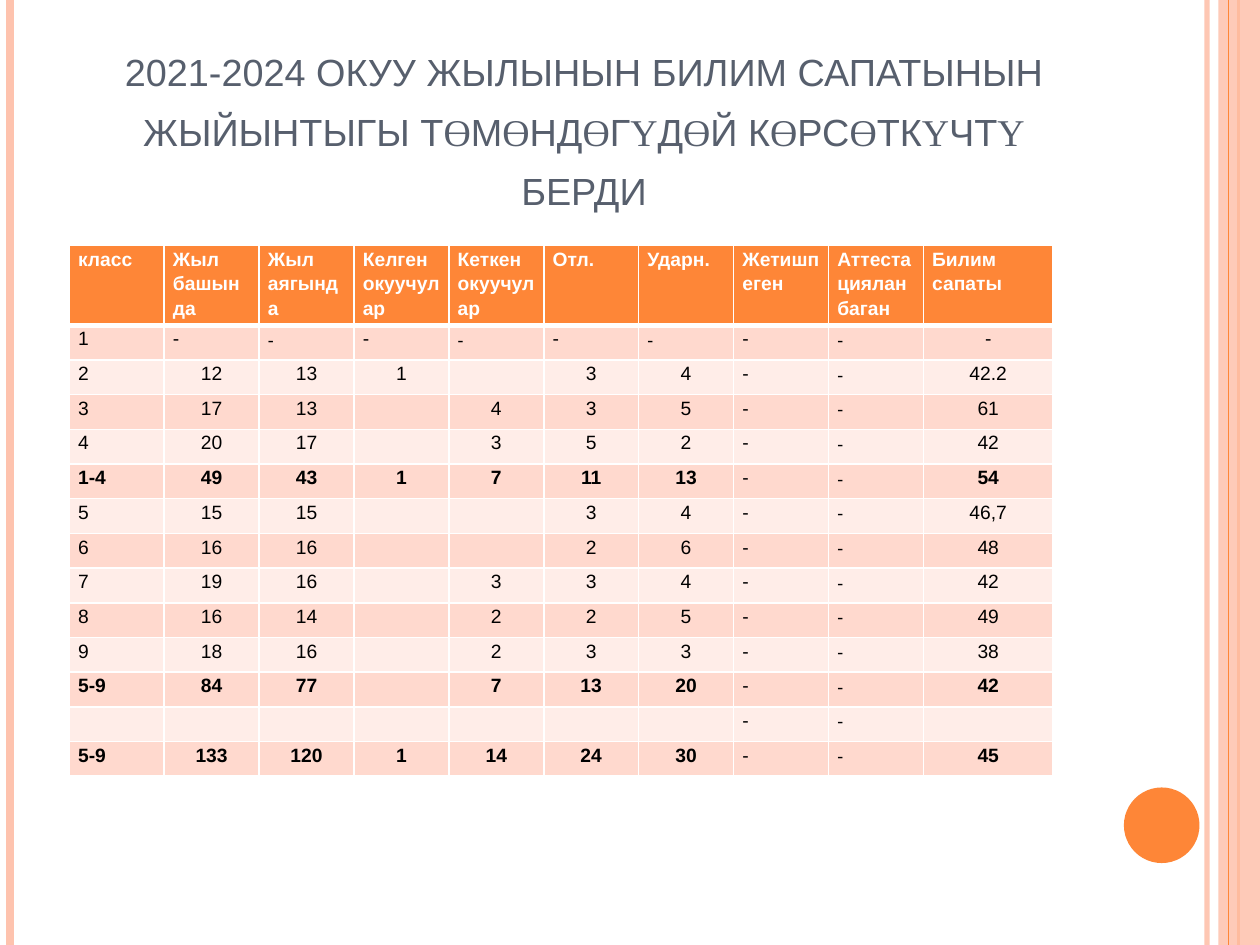
from itertools import groupby

from lxml.etree import SubElement
from pptx import Presentation
from pptx.dml.color import RGBColor
from pptx.enum.shapes import MSO_CONNECTOR as CONNECTOR, MSO_SHAPE as SHAPE
from pptx.enum.text import MSO_ANCHOR as ANCHOR, PP_ALIGN as ALIGN
from pptx.oxml.ns import qn
from pptx.util import Inches, Pt

COLORS = {"orange": "FE8637", "peach": "FEC3AE", "slate": "575F6D", "white": "FFFFFF",
          "black": "000000", "dark band": "FFD9CE", "light band": "FFEDE8"}
SERIF_LETTERS = "өү"
TITLE = "2021-2024 окуу жылынын билим сапатынын жыйынтыгы төмөндөгүдөй көрсөткүчтү берди"

HEADERS = ["класс", "Жыл башында", "Жыл аягында", "Келген окуучулар", "Кеткен окуучулар",
           "Отл.", "Ударн.", "Жетишпеген", "Аттестацияланбаган", "Билим сапаты"]
RESULTS = [
    ["1", "-", "-", "-", "-", "-", "-", "-", "-", "-"],
    ["2", "12", "13", "1", "", "3", "4", "-", "-", "42.2"],
    ["3", "17", "13", "", "4", "3", "5", "-", "-", "61"],
    ["4", "20", "17", "", "3", "5", "2", "-", "-", "42"],
    ["1-4", "49", "43", "1", "7", "11", "13", "-", "-", "54"],
    ["5", "15", "15", "", "", "3", "4", "-", "-", "46,7"],
    ["6", "16", "16", "", "", "2", "6", "-", "-", "48"],
    ["7", "19", "16", "", "3", "3", "4", "-", "-", "42"],
    ["8", "16", "14", "", "2", "2", "5", "-", "-", "49"],
    ["9", "18", "16", "", "2", "3", "3", "-", "-", "38"],
    ["5-9", "84", "77", "", "7", "13", "20", "-", "-", "42"],
    ["", "", "", "", "", "", "", "-", "-", ""],
    ["5-9", "133", "120", "1", "14", "24", "30", "-", "-", "45"],
]


def rgb(name):
    return RGBColor.from_string(COLORS[name])


def set_alpha(fill_parent, percent):
    """Make the solid fill found below the element partly transparent."""
    color = next(fill_parent.iter(qn("a:srgbClr")))
    SubElement(color, qn("a:alpha"), val=str(percent * 1000))


prs = Presentation()
prs.slide_width, prs.slide_height = Inches(10), Inches(7.5)
slide = prs.slides.add_slide(prs.slide_layouts[6])
shapes = slide.shapes

# Side stripes: x, colour, width, opacity; the wide band lies under the last one
for x, color, width, opacity in [(9.58, "peach", 3, 93), (0.08, "peach", 4.5, 100),
                                 (9.83, "peach", 0, 87), (9.75, "orange", 0.75, 100)]:
    if not width:
        inner_stripe = shapes.add_connector(CONNECTOR.STRAIGHT, Inches(x), 0, Inches(x), prs.slide_height)
        inner_stripe.line.color.rgb, inner_stripe.line.width = rgb("orange"), Pt(1.5)
        SubElement(inner_stripe._element.spPr, qn("a:effectLst"))
        band = shapes.add_shape(SHAPE.RECTANGLE, Inches(9.67), 0, Inches(0.33), prs.slide_height)
        band.shadow.inherit = False
        band.fill.solid()
        band.fill.fore_color.rgb = rgb(color)
        set_alpha(band._element.spPr, opacity)
        band.line.fill.background()
        continue
    stripe = shapes.add_connector(CONNECTOR.STRAIGHT, Inches(x), 0, Inches(x), prs.slide_height)
    stripe.line.color.rgb, stripe.line.width = rgb(color), Pt(width)
    if opacity < 100:
        set_alpha(stripe._element.spPr, opacity)
    SubElement(stripe._element.spPr, qn("a:effectLst"))

circle = shapes.add_shape(SHAPE.OVAL, Inches(8.92), Inches(6.25), Inches(0.6), Inches(0.6))
circle.shadow.inherit = False
circle.fill.solid()
circle.fill.fore_color.rgb = rgb("orange")
circle.line.fill.background()

# Title in small capitals, with the Kyrgyz letters in a serif face
title = shapes.add_textbox(Inches(0.55), Inches(0.31), Inches(8.17), Inches(1.88)).text_frame
title.word_wrap = True
title.vertical_anchor = ANCHOR.BOTTOM
title.margin_bottom = Inches(0.48)
heading = title.paragraphs[0]
heading.alignment = ALIGN.CENTER
heading.line_spacing = 1.05
for is_serif, letters in groupby(TITLE, lambda letter: letter in SERIF_LETTERS):
    run = heading.add_run()
    run.text = "".join(letters)
    run.font.name = "Times New Roman" if is_serif else "Arial"
    run.font.size = Pt(27)
    run.font.color.rgb = rgb("slate")
    run.font._element.set("cap", "small")

# Results table
rows = [HEADERS] + RESULTS
last_column, header_height, width, height = 1.03, 0.58, 7.81, 4.16
table = shapes.add_table(len(rows), len(HEADERS), Inches(0.55), Inches(1.95),
                         Inches(width), Inches(height)).table
for column in table.columns:
    column.width = Inches((width - last_column) / (len(HEADERS) - 1))
table.columns[len(HEADERS) - 1].width = Inches(last_column)
for row in table.rows:
    row.height = Inches((height - header_height) / len(RESULTS))
table.rows[0].height = Inches(header_height)

for r, values in enumerate(rows):
    is_header, is_total = r == 0, "-" in values[0]
    for c, value in enumerate(values):
        cell = table.cell(r, c)
        cell.margin_left = cell.margin_right = Inches(0.07)
        cell.margin_top = cell.margin_bottom = 0
        for side in ["L", "R", "T", "B"]:
            heavy = (side, r) in [("B", 0), ("T", 1)]
            border = SubElement(cell._tc.get_or_add_tcPr(), qn(f"a:ln{side}"), w=str(Pt(3 if heavy else 1)))
            SubElement(SubElement(border, qn("a:solidFill")), qn("a:srgbClr"), val=COLORS["white"])
        cell.fill.solid()
        cell.fill.fore_color.rgb = rgb("orange" if is_header else "dark band" if r % 2 else "light band")

        cell.text_frame.text = value
        paragraph = cell.text_frame.paragraphs[0]
        paragraph.line_spacing = 1.15
        if not is_header and c and (value != "-" or c == len(HEADERS) - 1):
            paragraph.alignment = ALIGN.CENTER
        if not value:
            SubElement(paragraph._p, qn("a:endParaRPr"), sz="1100")
        for run in paragraph.runs:
            run.font.size = Pt(11)
            in_calibri = value == "-" and (c == 8 or r == 1 and c in (2, 4, 6))
            run.font.name = "Calibri" if in_calibri else "Arial"
            run.font.bold = is_header or is_total and value != "-"
            run.font.color.rgb = rgb("white" if is_header else "black")

prs.save("out.pptx")
